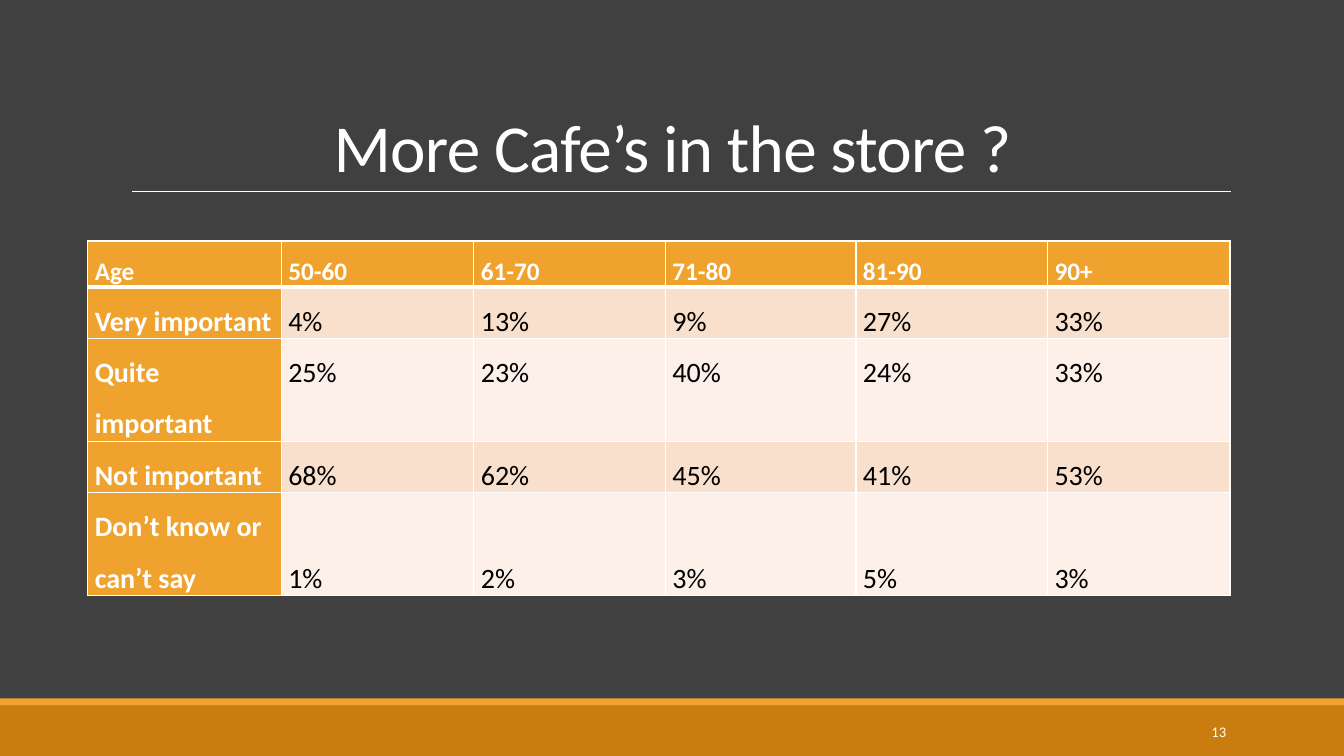
from lxml import etree
from pptx import Presentation
from pptx.dml.color import RGBColor
from pptx.enum import shapes, text
from pptx.oxml import ns
from pptx.util import Inches, Pt

DARK = RGBColor(0x40, 0x40, 0x40)
AMBER = RGBColor(0xF0, 0xA2, 0x2E)
BROWN = RGBColor(0xC8, 0x7D, 0x0E)
PEACH = RGBColor(0xF9, 0xE0, 0xCD)
CREAM = RGBColor(0xFC, 0xF0, 0xE8)
WHITE = RGBColor(0xFF, 0xFF, 0xFF)
BLACK = RGBColor(0, 0, 0)

WIDE, HIGH = 13.33, 7.5
COLS = [1.92, 1.91, 1.9, 1.89, 1.9, 1.81]
TALL = [0.46, 0.51, 1.02, 0.51, 1.02]
DATA = [
    ["Age", "50-60", "61-70", "71-80", "81-90", "90+"],
    ["Very important", "4%", "13%", "9%", "27%", "33%"],
    ["Quite important", "25%", "23%", "40%", "24%", "33%"],
    ["Not important", "68%", "62%", "45%", "41%", "53%"],
    ["Don’t know or can’t say", "1%", "2%", "3%", "5%", "3%"],
]


def style(para, size, color, bold=False):
    for run in para.runs:
        font = run.font
        font.name, font.size, font.bold = "Calibri", Pt(size), bold
        font.color.rgb = color


def label(slide, box, words, size, align, anchor):
    frame = slide.shapes.add_textbox(*map(Inches, box)).text_frame
    frame.word_wrap = True
    frame.vertical_anchor = anchor
    frame.text = words
    para = frame.paragraphs[0]
    para.alignment = align
    style(para, size, WHITE)
    return para


def band(slide, box, color):
    bar = slide.shapes.add_shape(shapes.MSO_SHAPE.RECTANGLE, *map(Inches, box))
    bar.shadow.inherit = False
    bar.fill.solid()
    bar.fill.fore_color.rgb = color
    bar.line.fill.background()


def edge(cell, sides):
    """Draw white borders, given as side and width in points."""
    props = cell._tc.get_or_add_tcPr()
    for spot, (side, width) in enumerate(sides.items()):
        line = etree.Element(ns.qn("a:ln" + side), w=str(Pt(width)))
        fill = etree.SubElement(line, ns.qn("a:solidFill"))
        etree.SubElement(fill, ns.qn("a:srgbClr"), val=str(WHITE))
        props.insert(spot, line)


def header(slide, left, top, width, height):
    # Title
    para = label(slide, (left, top, width, height), "More Cafe’s in the store ?", 48,
                 text.PP_ALIGN.CENTER, text.MSO_ANCHOR.BOTTOM)
    para.line_spacing = 0.85
    para.runs[0]._r.get_or_add_rPr().set("spc", "-50")
    # Rule under the title
    base = Inches(top + height)
    rule = slide.shapes.add_connector(shapes.MSO_CONNECTOR.STRAIGHT, Inches(left + 0.14),
                                      base, Inches(left + width + 0.04), base)
    rule.line.color.rgb = WHITE
    rule.line.width = Pt(0.5)
    etree.SubElement(rule._element.spPr, ns.qn("a:effectLst"))


def grid(slide, left, top):
    box = map(Inches, (left, top, sum(COLS), sum(TALL)))
    table = slide.shapes.add_table(len(DATA), len(COLS), *box).table
    for col, width in zip(table.columns, COLS):
        col.width = Inches(width)
    for r, values in enumerate(DATA):
        table.rows[r].height = Inches(TALL[r])
        for c, value in enumerate(values):
            cell = table.cell(r, c)
            head = r == 0 or c == 0
            cell.margin_left = cell.margin_right = Inches(0.07)
            cell.margin_top = cell.margin_bottom = 0
            # The last row's values sit at the foot of the row
            if r == len(DATA) - 1:
                cell.vertical_anchor = text.MSO_ANCHOR.BOTTOM
            cell.text_frame.text = value
            para = cell.text_frame.paragraphs[0]
            para.line_spacing = 1.5
            style(para, 20 if r else 18, WHITE if head else BLACK, head)
            cell.fill.solid()
            cell.fill.fore_color.rgb = AMBER if head else PEACH if r % 2 else CREAM
            edge(cell, {"L": 1, "R": 1, "T": 3 if r == 1 else 1, "B": 1 if r else 3})


def footer(slide, top):
    band(slide, (0, top + 0.07, WIDE, HIGH - top - 0.07), BROWN)
    band(slide, (0, top, WIDE, 0.07), AMBER)
    # Page number
    label(slide, (10.83, top + 0.13, 1.43, 0.4), "13", 10.5,
          text.PP_ALIGN.RIGHT, text.MSO_ANCHOR.MIDDLE)


def main():
    deck = Presentation()
    deck.slide_width, deck.slide_height = Inches(WIDE), Inches(HIGH)
    slide = deck.slides.add_slide(deck.slide_layouts[6])
    slide.background.fill.solid()
    slide.background.fill.fore_color.rgb = DARK
    footer(slide, 6.93)
    header(slide, 1.17, 0.31, 11, 1.59)
    grid(slide, 0.87, 2.39)
    deck.save("out.pptx")


if __name__ == "__main__":
    main()
